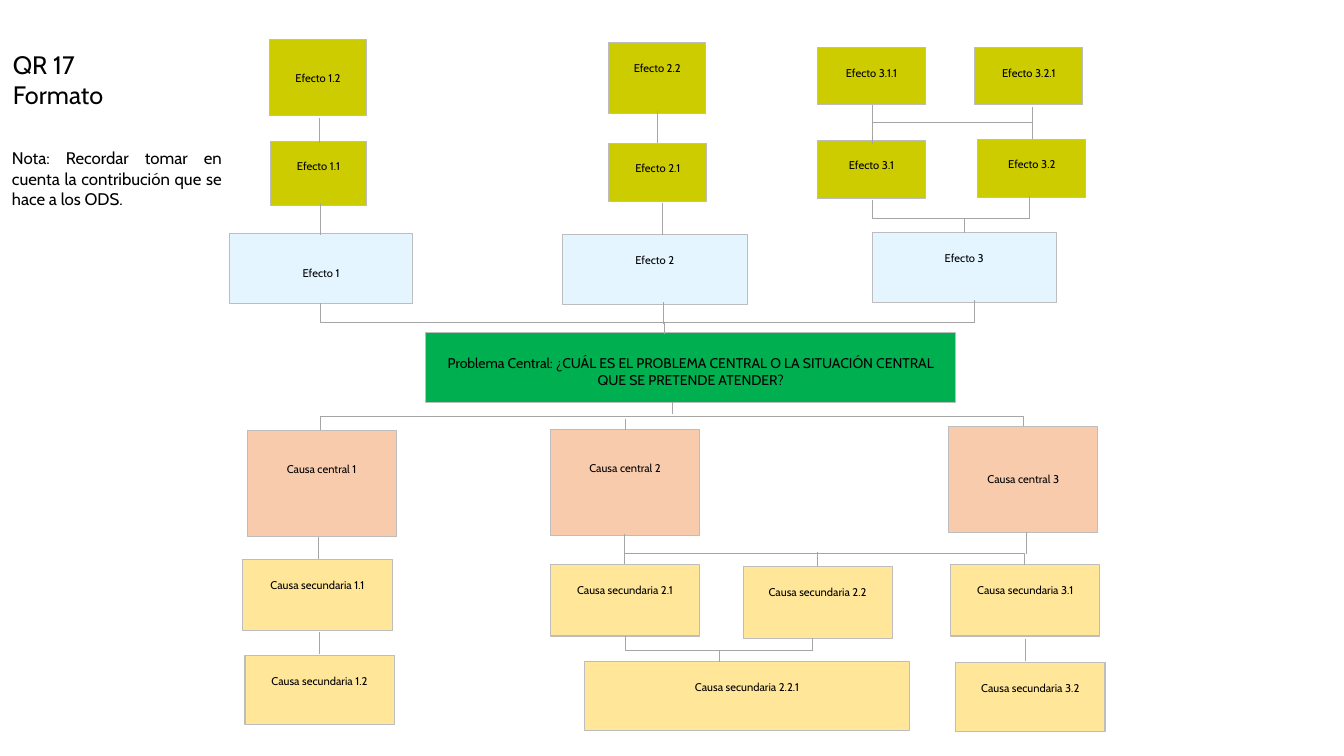
"""Builds the problem tree slide: effects above, central problem, causes below."""
from pptx import Presentation
from pptx.dml.color import RGBColor
from pptx.enum.shapes import MSO_CONNECTOR as Link, MSO_SHAPE as Shape
from pptx.enum.text import MSO_ANCHOR as Anchor, PP_ALIGN as Align
from pptx.oxml.ns import qn
from pptx.util import Inches, Pt
from lxml.etree import SubElement

CELL = Inches(0.01)
COLUMNS, ROWS = 1333, 750
LINE_HEIGHT = 1.215


def color(format_part, value):
    format_part.rgb = RGBColor.from_string(value)


def write(box, text, size, align, skipped_lines=0):
    frame = box.text_frame
    frame.word_wrap = True
    frame.vertical_anchor = Anchor.TOP
    frame.margin_top = 5 * CELL + Pt(skipped_lines * size * LINE_HEIGHT)
    para = frame.paragraphs[0]
    para.text = text
    para.alignment = align
    para.font.size = Pt(size)
    para.font.name = "Cabin"
    color(para.font.color, "000000")


deck = Presentation()
deck.slide_width, deck.slide_height = COLUMNS * CELL, ROWS * CELL
page = deck.slides.add_slide(deck.slide_layouts[6])

tree = {
    "CCCC00": [
        ("Efecto 1.2", 267, 39, 97, 76, 2),
        ("Efecto 2.2", 604, 42, 96, 71, 1),
        ("Efecto 1.1", 268, 140, 96, 64, 1),
        ("Efecto 2.1", 604, 142, 97, 58, 1),
        ("Efecto 3.1.1", 811, 47, 107, 57, 1),
        ("Efecto 3.2.1", 967, 47, 107, 57, 1),
        ("Efecto 3.1", 811, 139, 107, 58, 1),
        ("Efecto 3.2", 970, 138, 107, 58, 1),
    ],
    "E5F5FF": [
        ("Efecto 1", 228, 232, 181, 69, 2),
        ("Efecto 2", 558, 233, 183, 69, 1),
        ("Efecto 3", 865, 231, 183, 69, 1),
    ],
    "00B050": [
        ("Problema Central: ¿CUÁL ES EL PROBLEMA CENTRAL O LA SITUACIÓN CENTRAL "
         "QUE SE PRETENDE ATENDER?", 422, 330, 526, 69, 1),
    ],
    "F8CBAD": [
        ("Causa central 1", 245, 427, 148, 105, 2),
        ("Causa central 2", 546, 426, 148, 105, 2),
        ("Causa central 3", 941, 423, 148, 105, 3),
    ],
    "FFE699": [
        ("Causa secundaria 1.1", 241, 555, 148, 71, 1),
        ("Causa secundaria 1.2", 243, 650, 148, 69, 1),
        ("Causa secundaria 2.1", 546, 560, 148, 71, 1),
        ("Causa secundaria 2.2", 737, 562, 148, 71, 1),
        ("Causa secundaria 2.2.1", 580, 656, 322, 69, 1),
        ("Causa secundaria 3.1", 943, 560, 148, 71, 1),
        ("Causa secundaria 3.2", 948, 657, 148, 69, 1),
    ],
}
for fill, nodes in tree.items():
    for text, *place, skipped_lines in nodes:
        box = page.shapes.add_shape(Shape.RECTANGLE, *(n * CELL for n in place))
        box.shadow.inherit = False
        box.fill.solid()
        color(box.fill.fore_color, fill)
        color(box.line.color, "BDBDBD")
        box.line.width = Pt(0.75)
        write(box, text, 10 if fill == "00B050" else 8, Align.CENTER, skipped_lines)

connectors = []

stems = [
    (667, 399, 411), (620, 416, 427), (316, 533, 555), (317, 627, 649),
    (619, 530, 552), (1018, 528, 550), (1017, 634, 656), (811, 548, 562),
    (806, 633, 645), (713, 645, 657), (966, 298, 320), (318, 201, 233),
    (317, 117, 142), (657, 201, 233), (652, 110, 142), (865, 121, 143),
    (1024, 106, 128), (658, 300, 321), (956, 217, 231), (1021, 194, 216),
    (659, 319, 331),
]
for column, top, bottom in stems:
    ends = (column, top, column, bottom)
    connectors.append(page.shapes.add_connector(Link.STRAIGHT, *(n * CELL for n in ends)))

brackets = [
    (318, 427, 1015, 423, 413), (619, 560, 1016, 561, 549),
    (620, 631, 806, 645, 645), (318, 301, 967, 320, 320),
    (865, 104, 1024, 138, 121), (865, 198, 1022, 217, 217),
]
for left, start, right, end, bend in brackets:
    rise, run = end - start, right - left
    middle_x, middle_y = (left + right) / 2, (start + end) / 2
    frame = (middle_x - abs(rise) / 2, middle_y - run / 2,
             middle_x + abs(rise) / 2, middle_y + run / 2)
    bracket = page.shapes.add_connector(Link.ELBOW, *(round(n * CELL) for n in frame))
    transform = bracket.element.spPr.find(qn("a:xfrm"))
    transform.set("rot", str((270 if rise > 0 else 90) * 60000))
    transform.set("flipH", "1")
    if rise < 0:
        transform.set("flipV", "1")
    geometry = bracket.element.spPr.find(qn("a:prstGeom"))
    if bend == end:
        geometry.set("prst", "bentConnector2")
    else:
        share = round((bend - start) / rise * 100000)
        SubElement(geometry.find(qn("a:avLst")), qn("a:gd"), name="adj1", fmla=f"val {share}")
    connectors.append(bracket)

for connector in connectors:
    color(connector.line.color, "A5A5A5")
    connector.line.width = Pt(0.5)
    SubElement(connector.element.spPr, qn("a:effectLst"))

captions = [
    ("Nota: Recordar tomar en cuenta la contribución que se hace a los ODS.",
     12, Align.JUSTIFY, (2, 142, 228, 71)),
    ("QR 17 Formato", 18, Align.LEFT, (3, 44, 140, 71)),
]
for text, size, align, place in captions:
    box = page.shapes.add_textbox(*(n * CELL for n in place))
    write(box, text, size, align)

deck.save("out.pptx")
